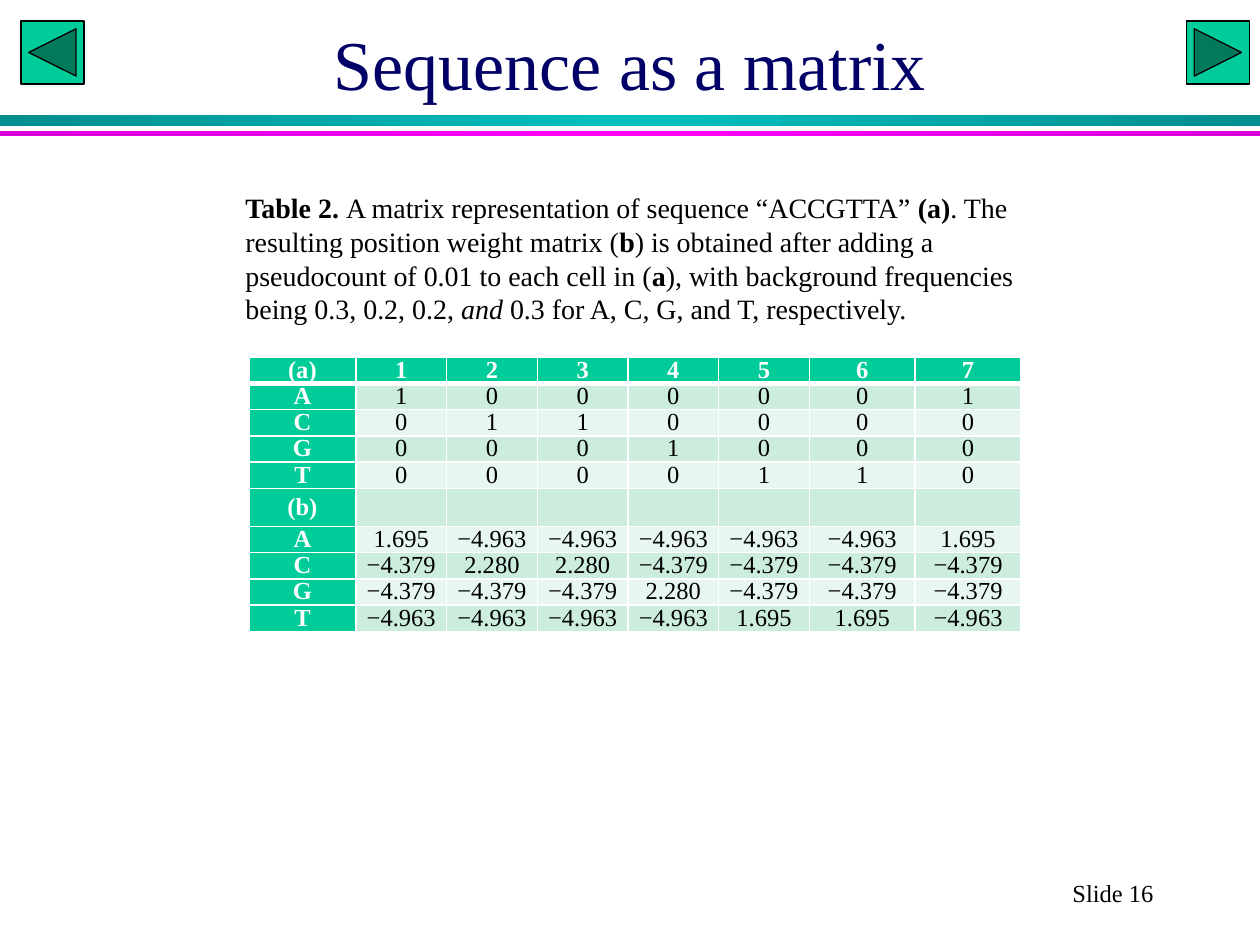
import copy

import pptx
import pptx.dml.color
import pptx.enum.shapes
import pptx.enum.text
import pptx.oxml
import pptx.oxml.ns
import pptx.util

RGBColor = pptx.dml.color.RGBColor
Shape = pptx.enum.shapes.MSO_SHAPE
Align = pptx.enum.text.PP_ALIGN
Anchor = pptx.enum.text.MSO_ANCHOR
qn = pptx.oxml.ns.qn

NAVY = RGBColor(0x00, 0x00, 0x66)
BLACK = RGBColor(0x00, 0x00, 0x00)
WHITE = RGBColor(0xFF, 0xFF, 0xFF)
GREEN = RGBColor(0x00, 0xCC, 0x99)
MINT = RGBColor(0xCC, 0xEC, 0xDE)
PALE_MINT = RGBColor(0xE7, 0xF6, 0xEF)
DARK_TEAL = RGBColor(0x00, 0x8E, 0x8E)
TEAL = RGBColor(0x00, 0xC0, 0xC0)
DARK_MAGENTA = RGBColor(0xDA, 0x00, 0xDA)
MAGENTA = RGBColor(0xFF, 0x00, 0xFF)

GRID_COLUMNS, GRID_ROWS = 120, 90


def add_text(paragraph, text, size=14, color=BLACK, bold=False, italic=False,
             font="Times New Roman"):
    run = paragraph.add_run()
    run.text = text
    run.font.name = font
    run.font.size = pptx.util.Pt(size)
    run.font.color.rgb = color
    run.font.bold = bold
    run.font.italic = italic


def border_cell(cell, **widths):
    """Draw white cell borders; widths in points, keyed by side."""
    properties = cell._tc.get_or_add_tcPr()
    for side, width in widths.items():
        properties.append(pptx.oxml.parse_xml(
            f'<a:ln{side} {pptx.oxml.ns.nsdecls("a")} w="{pptx.util.Pt(width)}">'
            f'<a:solidFill><a:srgbClr val="{WHITE}"/></a:solidFill></a:ln{side}>'))


class SlideBuilder:
    def __init__(self):
        self.deck = pptx.Presentation()
        self.deck.slide_width = pptx.util.Inches(10)
        self.deck.slide_height = pptx.util.Inches(7.5)
        self.slide = self.deck.slides.add_slide(self.deck.slide_layouts[5])

    def box(self, column, row, columns, rows):
        """Turn grid units into left, top, width and height."""
        across = self.deck.slide_width / GRID_COLUMNS
        down = self.deck.slide_height / GRID_ROWS
        return [int(n) for n in (column * across, row * down,
                                 columns * across, rows * down)]

    def title(self, text, *place):
        title = self.slide.shapes.title
        title.left, title.top, title.width, title.height = self.box(*place)
        title.text_frame.vertical_anchor = Anchor.MIDDLE
        paragraph = title.text_frame.paragraphs[0]
        paragraph.alignment = Align.CENTER
        add_text(paragraph, text, size=40, color=NAVY)

    def shape(self, kind, *place):
        shape = self.slide.shapes.add_shape(kind, *self.box(*place))
        shape.shadow.inherit = False
        return shape

    def band(self, edge, middle, *place):
        band = self.shape(Shape.RECTANGLE, *place)
        band.line.fill.background()
        band.fill.gradient()
        band.fill.gradient_angle = 0
        stops = next(band._element.iter(qn("a:gsLst")))
        stops.append(copy.deepcopy(stops[0]))
        for stop, position, color in zip(band.fill.gradient_stops, (0, 0.5, 1),
                                         (edge, middle, edge)):
            stop.position = position
            stop.color.rgb = color

    def button(self, kind, *place):
        button = self.shape(kind, *place)
        button.fill.solid()
        button.fill.fore_color.rgb = GREEN
        button.line.color.rgb = BLACK
        button.line.width = pptx.util.Pt(0.75)

    def text_box(self, pieces, *place, align=Align.LEFT, size=14):
        """Each piece is a text and its format."""
        frame = self.slide.shapes.add_textbox(*self.box(*place)).text_frame
        frame.word_wrap = True
        paragraph = frame.paragraphs[0]
        paragraph.alignment = align
        for text, style in pieces:
            add_text(paragraph, text, size=size, **style)

    def table(self, rows, widths, *place):
        table = self.slide.shapes.add_table(
            len(rows), len(widths), *self.box(*place)).table
        for column, width in zip(table.columns, widths):
            column.width = pptx.util.Inches(width)
        for r, values in enumerate(rows):
            for c, value in enumerate(values):
                heading = r == 0 or c == 0
                cell = table.cell(r, c)
                border_cell(cell, L=1, R=1, T=3 if r == 1 else 1,
                            B=3 if r == 0 else 1)
                cell.fill.solid()
                cell.fill.fore_color.rgb = (
                    GREEN if heading else MINT if r % 2 else PALE_MINT)
                cell.margin_left = cell.margin_right = pptx.util.Inches(0.07)
                cell.margin_top = cell.margin_bottom = 0
                cell.vertical_anchor = Anchor.MIDDLE
                paragraph = cell.text_frame.paragraphs[0]
                paragraph.alignment = Align.CENTER
                paragraph.line_spacing = pptx.util.Pt(15)
                if value:
                    add_text(paragraph, value, bold=heading,
                             color=WHITE if heading else BLACK)


SEQUENCE = "ACCGTTA"
BASES = "ACGT"
# Weight of each base where it is present and where it is absent
WEIGHTS = {"A": ("1.695", "−4.963"), "C": ("2.280", "−4.379"),
           "G": ("2.280", "−4.379"), "T": ("1.695", "−4.963")}


def matrix_rows():
    positions = [str(n + 1) for n in range(len(SEQUENCE))]
    counts = [[base] + [str(int(s == base)) for s in SEQUENCE] for base in BASES]
    weights = [[base] + [WEIGHTS[base][s != base] for s in SEQUENCE]
               for base in BASES]
    return ([["(a)"] + positions] + counts
            + [["(b)"] + [""] * len(SEQUENCE)] + weights)


def main():
    page = SlideBuilder()

    # Header bands, navigation buttons and title
    page.band(DARK_TEAL, TEAL, 0, 11, 120, 1)
    page.band(DARK_MAGENTA, MAGENTA, 0, 12.5, 120, 0.5)
    page.button(Shape.ACTION_BUTTON_BACK_OR_PREVIOUS, 2, 2, 6, 6)
    page.button(Shape.ACTION_BUTTON_FORWARD_OR_NEXT, 113, 2, 6, 6)
    page.title("Sequence as a matrix", 9, 0, 102, 12)

    # Slide number
    page.text_box([("Slide 16", {})], 94, 83, 24, 4, align=Align.CENTER)

    # Count matrix (a) and position weight matrix (b)
    page.table(matrix_rows(), [0.85] + [0.72] * 5 + [0.84] * 2,
               23.7, 34, 73.7, 25)

    # Table caption
    bold, italic = {"bold": True}, {"italic": True}
    page.text_box([
        ("Table 2. ", bold),
        ("A matrix representation of sequence “ACCGTTA” ", {}),
        ("(a)", bold),
        (". The resulting position weight matrix (", {}),
        ("b", bold),
        (") is obtained after adding a pseudocount of 0.01 to each cell in (", {}),
        ("a", bold),
        ("), with background frequencies being 0.3, 0.2, 0.2, ", {}),
        ("and ", italic),
        ("0.3 for A, C, G, and T, respectively.", {}),
    ], 22.2, 17.6, 78.5, 17.4, size=16)

    page.deck.save("out.pptx")


if __name__ == "__main__":
    main()
